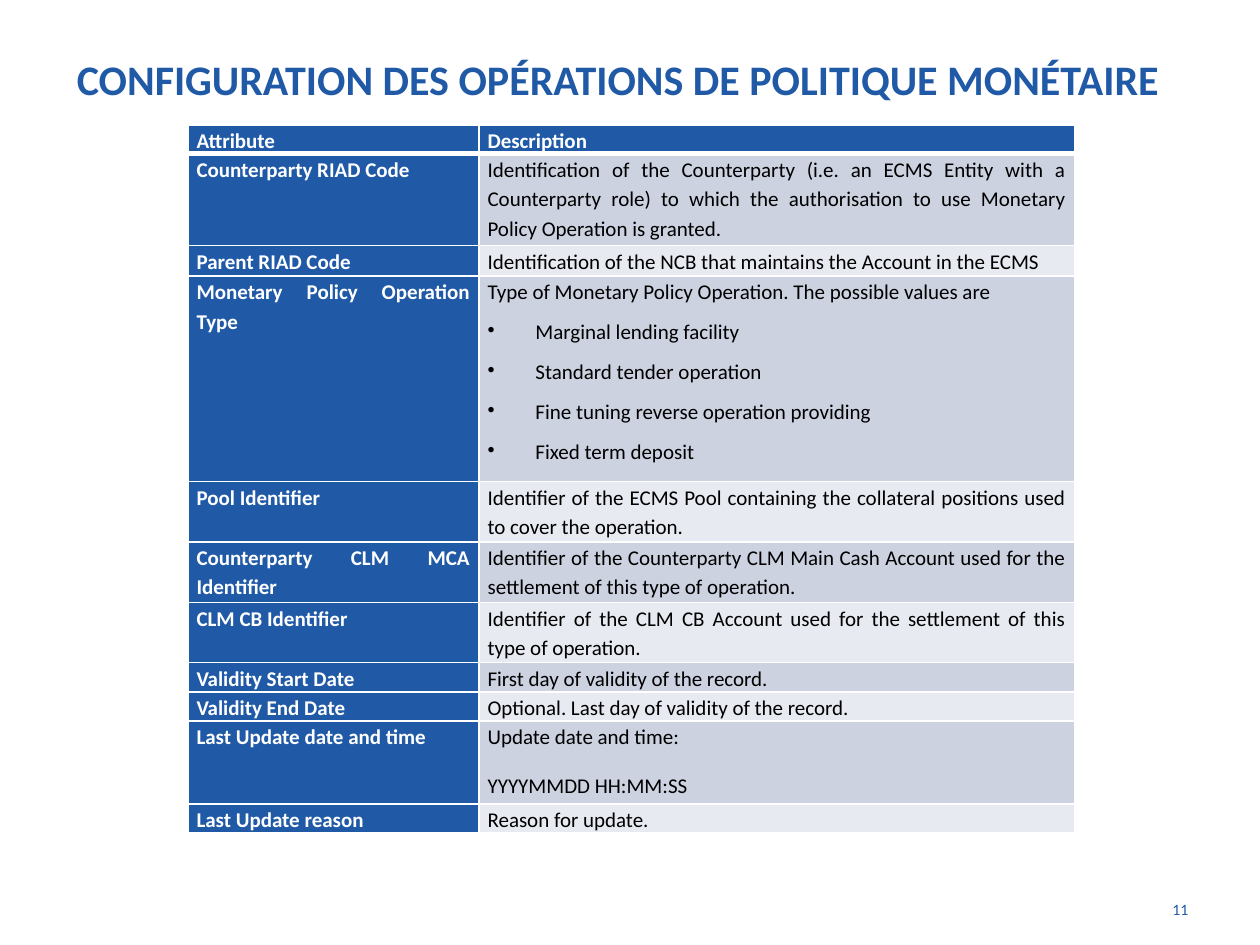
from lxml import etree
from pptx import Presentation
from pptx.dml.color import RGBColor
from pptx.enum import text
from pptx.oxml import ns
from pptx import util as u

BLUE = RGBColor(0x20, 0x5A, 0xA7)
WHITE = RGBColor(0xFF, 0xFF, 0xFF)
BLACK = RGBColor(0, 0, 0)
BANDS = (RGBColor(0xCD, 0xD2, 0xE1), RGBColor(0xE8, 0xEA, 0xF1))
FONT = "Calibri"

TITLE = "CONFIGURATION DES OPÉRATIONS DE POLITIQUE MONÉTAIRE"
PAGE_NUMBER = "11"
HEADER = ("Attribute", "Description")
ATTRIBUTES = [
    ("Counterparty RIAD Code", 0.73,
     ["Identification of the Counterparty (i.e. an ECMS Entity with a Counterparty role) "
      "to which the authorisation to use Monetary Policy Operation is granted."]),
    ("Parent RIAD Code", 0.24,
     ["Identification of the NCB that maintains the Account in the ECMS"]),
    ("Monetary Policy Operation Type", 1.63,
     ["Type of Monetary Policy Operation. The possible values are",
      "• Marginal lending facility",
      "• Standard tender operation",
      "• Fine tuning reverse operation providing",
      "• Fixed term deposit"]),
    ("Pool Identifier", 0.48,
     ["Identifier of the ECMS Pool containing the collateral positions used to cover the operation."]),
    ("Counterparty CLM MCA Identifier", 0.48,
     ["Identifier of the Counterparty CLM Main Cash Account used for the settlement "
      "of this type of operation."]),
    ("CLM CB Identifier", 0.48,
     ["Identifier of the CLM CB Account used for the settlement of this type of operation."]),
    ("Validity Start Date", 0.23, ["First day of validity of the record."]),
    ("Validity End Date", 0.23, ["Optional. Last day of validity of the record."]),
    ("Last Update date and time", 0.66, ["Update date and time:", "YYYYMMDD HH:MM:SS"]),
    ("Last Update reason", 0.23, ["Reason for update."]),
]
HEADER_HEIGHT = 0.23
COLUMN_WIDTHS = (2.31, 4.73)
WIDE_GAP_AFTER = {"Update date and time:", "Reason for update."}
NO_GAP_AFTER = {"Last Update date and time", "Last Update reason"}


def write(frame, lines, size=12, color=BLACK, bold=False, align=None,
          spacing=None, before=0, after=None):
    for index, line in enumerate(lines):
        paragraph = frame.paragraphs[0] if index == 0 else frame.add_paragraph()
        if line.startswith("• "):
            line = line[2:]
            properties = paragraph._p.get_or_add_pPr()
            properties.set("marL", str(u.Inches(0.38)))
            properties.set("indent", str(-u.Inches(0.38)))
            etree.SubElement(properties, ns.qn("a:buChar")).set("char", "•")
        paragraph.alignment = align
        paragraph.line_spacing = spacing
        if index:
            paragraph.space_before = u.Pt(before)
        if after is not None:
            gap = 8 if line in WIDE_GAP_AFTER else 0 if line in NO_GAP_AFTER else after
            paragraph.space_after = u.Pt(gap)
        run = paragraph.add_run()
        run.text = line
        run.font.name, run.font.size, run.font.bold = FONT, u.Pt(size), bold
        run.font.color.rgb = color


def add_borders(cell, **widths):
    properties = cell._tc.get_or_add_tcPr()
    for side in "LRTB":
        line = etree.SubElement(properties, ns.qn(f"a:ln{side}"), w=str(u.Pt(widths.get(side, 1))))
        fill = etree.SubElement(line, ns.qn("a:solidFill"))
        etree.SubElement(fill, ns.qn("a:srgbClr"), val=str(WHITE))


def fill_cell(cell, lines, fill, color, bold, align, **borders):
    cell.margin_left = cell.margin_right = u.Inches(0.07)
    cell.margin_top = cell.margin_bottom = 0
    add_borders(cell, **borders)
    cell.fill.solid()
    cell.fill.fore_color.rgb = fill
    write(cell.text_frame, lines, color=color, bold=bold, align=align,
          spacing=1.15, before=3, after=3)


def place(shape, left, top, width, height):
    shape.left, shape.top = u.Inches(left), u.Inches(top)
    shape.width, shape.height = u.Inches(width), u.Inches(height)


def add_attribute_table(slide):
    heights = [HEADER_HEIGHT] + [height for _, height, _ in ATTRIBUTES]
    frame = slide.shapes.add_table(len(heights), len(COLUMN_WIDTHS), 0, 0, 1, 1)
    place(frame, 1.49, 0.99, sum(COLUMN_WIDTHS), sum(heights))
    table = frame.table
    for column, width in zip(table.columns, COLUMN_WIDTHS):
        column.width = u.Inches(width)
    for row, height in zip(table.rows, heights):
        row.height = u.Inches(height)
    for column, label in enumerate(HEADER):
        fill_cell(table.cell(0, column), [label], BLUE, WHITE, True, text.PP_ALIGN.LEFT, B=3)
    for row, (name, _, description) in enumerate(ATTRIBUTES, start=1):
        top = 3 if row == 1 else 1
        band = BANDS[(row - 1) % 2]
        justify = text.PP_ALIGN.JUSTIFY
        fill_cell(table.cell(row, 0), [name], BLUE, WHITE, True, justify, T=top)
        fill_cell(table.cell(row, 1), description, band, BLACK, False, justify, T=top)


def main():
    presentation = Presentation()
    presentation.slide_width, presentation.slide_height = u.Inches(10), u.Inches(7.5)
    slide = presentation.slides.add_slide(presentation.slide_layouts[5])

    title = slide.shapes.title
    place(title, 0.51, 0, 9, 1.25)
    title.text_frame.auto_size = text.MSO_AUTO_SIZE.NONE
    title.text_frame.vertical_anchor = text.MSO_ANCHOR.MIDDLE
    write(title.text_frame, [TITLE], size=24, color=BLUE, bold=True, align=text.PP_ALIGN.LEFT)

    number = slide.shapes.add_textbox(0, 0, 1, 1)
    place(number, 8.94, 7.09, 0.59, 0.39)
    number.text_frame.word_wrap = True
    write(number.text_frame, [PAGE_NUMBER], size=9, color=BLUE, align=text.PP_ALIGN.RIGHT)

    add_attribute_table(slide)
    presentation.save("out.pptx")


if __name__ == "__main__":
    main()
